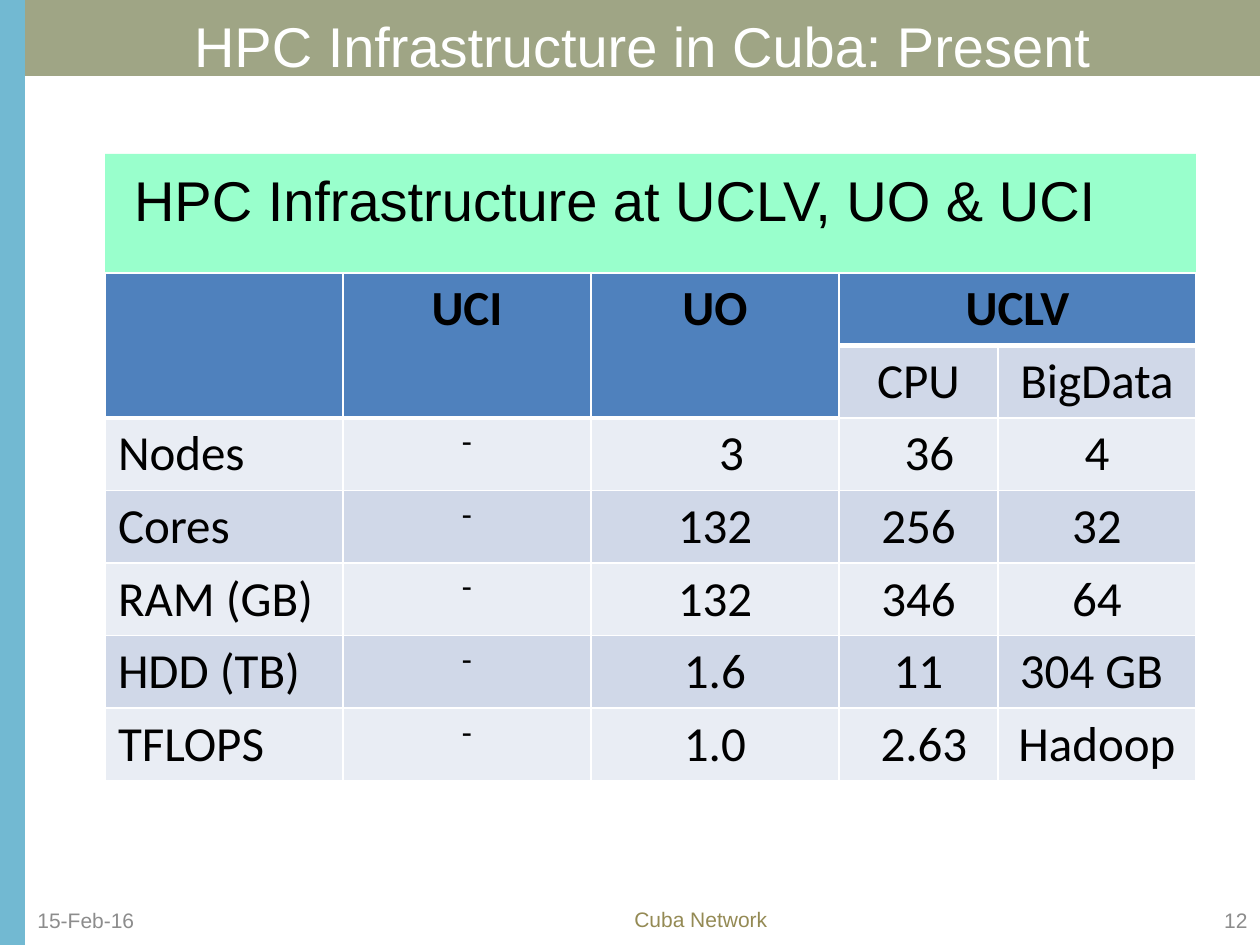
import pptx
import pptx.util
import pptx.dml.color
import pptx.enum.shapes
import pptx.enum.text
import pptx.oxml
import pptx.oxml.ns

SCALE = 914400 / 126
ALIGN = pptx.enum.text.PP_ALIGN
ANCHOR = pptx.enum.text.MSO_ANCHOR

THEME = {
    "bar": "9FA585", "stripe": "72B9D2", "banner": "99FFCC",
    "header": "4F81BD", "bands": ("E9EDF4", "D0D8E8"),
    "white": "FFFFFF", "black": "000000", "gray": "8C8C8C", "olive": "948A54",
    "heading_size": 32, "table_size": 28, "dash_size": 18, "footer_size": 12,
    "heading_font": "Arial", "table_font": "Calibri",
    "thin": 1, "thick": 3,
}

TITLE = "HPC Infrastructure in Cuba: Present"
BANNER = "HPC Infrastructure at UCLV, UO & UCI"
ROWS = [
    ["", "UCI", "UO", "UCLV", ""],
    ["", "", "", "CPU", "BigData"],
    ["Nodes", "-", "3", "36", "4"],
    ["Cores", "-", "132", "256", "32"],
    ["RAM (GB)", "-", "132", "346", "64"],
    ["HDD (TB)", "-", "1.6", "11", "304 GB"],
    ["TFLOPS", "-", "1.0", "2.63", "Hadoop"],
]
MERGES = [((0, 0), (1, 0)), ((0, 1), (1, 1)), ((0, 2), (1, 2)), ((0, 3), (0, 4))]
COLUMN_WIDTHS = [238, 248, 248, 159, 198]
ROW_HEIGHT = 72
TABLE_LEFT, TABLE_TOP = 105, 273
CELL_MARGIN = 13
INDENTS = {(2, 2): (33, 0), (2, 3): (22, 0), (6, 3): (11, 0), (5, 4): (0, 11)}
FOOTERS = [
    ("Cuba Network", (622, 906, 189, 39), "olive", ALIGN.LEFT, ANCHOR.TOP, 1),
    ("12", (1197, 895, 63, 50), "gray", ALIGN.RIGHT, ANCHOR.MIDDLE, 6),
    ("15-Feb-16", (25, 895, 147, 50), "gray", ALIGN.LEFT, ANCHOR.MIDDLE, 6),
]


def px(value):
    return pptx.util.Emu(round(value * SCALE))


def color(name):
    return pptx.dml.color.RGBColor.from_string(THEME.get(name, name))


def write(frame, text, *, size, fill, font="heading_font", bold=False, align=ALIGN.LEFT):
    paragraph = frame.paragraphs[0]
    paragraph.alignment = align
    run = paragraph.add_run()
    run.text = text
    run.font.size = pptx.util.Pt(THEME[size])
    run.font.name = THEME[font]
    run.font.bold = bold
    run.font.color.rgb = color(fill)


def add_box(slide, box, fill):
    shape = slide.shapes.add_shape(
        pptx.enum.shapes.MSO_SHAPE.RECTANGLE, *map(px, box))
    shape.shadow.inherit = False
    shape.fill.solid()
    shape.fill.fore_color.rgb = color(fill)
    shape.line.fill.background()
    return shape


def add_heading(slide, box, fill, text, *, text_fill, align, left=13):
    frame = add_box(slide, box, fill).text_frame
    frame.word_wrap = True
    frame.vertical_anchor = ANCHOR.TOP
    frame.margin_left, frame.margin_top = px(left), px(12)
    write(frame, text, size="heading_size", fill=text_fill, align=align)


def set_borders(cell, top, bottom):
    properties = cell._tc.get_or_add_tcPr()
    widths = {"lnL": "thin", "lnR": "thin", "lnT": top, "lnB": bottom}
    for tag, width in widths.items():
        properties.append(pptx.oxml.parse_xml(
            f'<a:{tag} {pptx.oxml.ns.nsdecls("a")} w="{pptx.util.Pt(THEME[width])}">'
            f'<a:solidFill><a:srgbClr val="{THEME["white"]}"/></a:solidFill></a:{tag}>'))


def add_table(slide):
    table = slide.shapes.add_table(
        len(ROWS), len(COLUMN_WIDTHS), px(TABLE_LEFT), px(TABLE_TOP),
        px(sum(COLUMN_WIDTHS)), px(ROW_HEIGHT * len(ROWS))).table
    for column, width in zip(table.columns, COLUMN_WIDTHS):
        column.width = px(width)
    for row in table.rows:
        row.height = px(ROW_HEIGHT)
    for first, last in MERGES:
        table.cell(*first).merge(table.cell(*last))
    for r, values in enumerate(ROWS):
        for c, text in enumerate(values):
            cell = table.cell(r, c)
            last_header = 1 if c < 3 else 0
            is_header = r <= last_header
            set_borders(cell, "thick" if r == last_header + 1 else "thin",
                        "thick" if r == last_header else "thin")
            cell.fill.solid()
            cell.fill.fore_color.rgb = color("header" if is_header else THEME["bands"][r % 2])
            left, right = INDENTS.get((r, c), (0, 0))
            cell.margin_left, cell.margin_right = px(CELL_MARGIN + left), px(CELL_MARGIN + right)
            if text:
                is_dash = text == "-"
                write(cell.text_frame, text, fill="black", bold=is_header,
                      size="dash_size" if is_dash else "table_size",
                      font="heading_font" if is_dash else "table_font",
                      align=ALIGN.CENTER if c else ALIGN.LEFT)


def add_footer(slide, text, box, fill, align, anchor, top):
    frame = slide.shapes.add_textbox(*map(px, box)).text_frame
    frame.word_wrap = True
    frame.vertical_anchor = anchor
    frame.margin_top = px(top)
    write(frame, text, size="footer_size", fill=fill, align=align)


def main():
    presentation = pptx.Presentation()
    presentation.slide_width, presentation.slide_height = px(1260), px(945)
    slide = presentation.slides.add_slide(presentation.slide_layouts[6])
    add_heading(slide, (25, 0, 1235, 76), "bar", TITLE,
                text_fill="white", align=ALIGN.CENTER)
    add_box(slide, (0, 0, 25, 945), "stripe")
    add_heading(slide, (TABLE_LEFT, 154, sum(COLUMN_WIDTHS), 118), "banner", BANNER,
                text_fill="black", align=ALIGN.LEFT, left=29)
    add_table(slide)
    for footer in FOOTERS:
        add_footer(slide, *footer)
    presentation.save("out.pptx")


if __name__ == "__main__":
    main()
